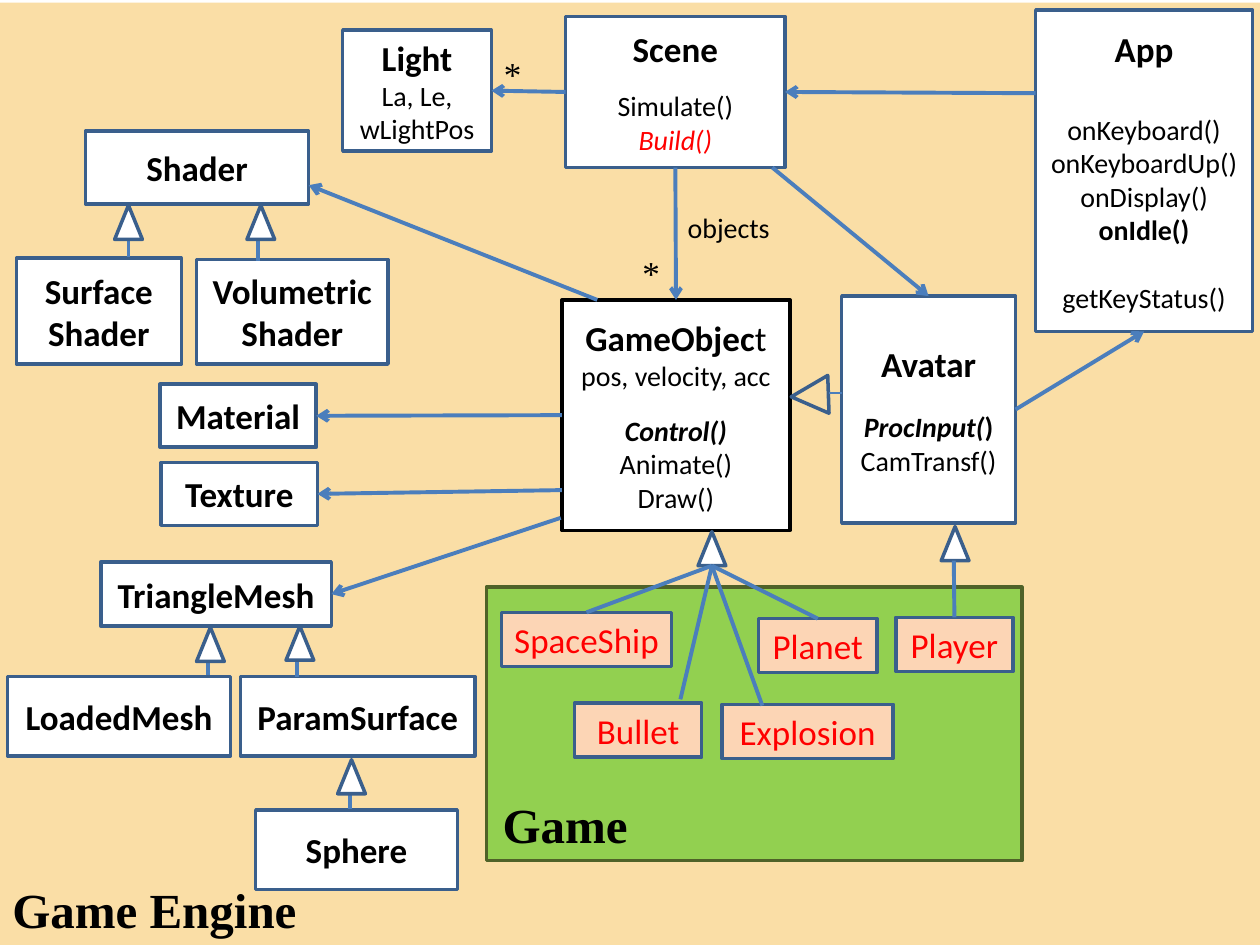
from dataclasses import dataclass

from lxml import etree
from pptx import Presentation
from pptx.dml.color import RGBColor
from pptx.enum.shapes import MSO_CONNECTOR, MSO_SHAPE
from pptx.enum.text import MSO_ANCHOR, MSO_AUTO_SIZE, PP_ALIGN
from pptx.oxml.ns import qn
from pptx.util import Inches, Pt

RECTANGLE = MSO_SHAPE.RECTANGLE
TRIANGLE = MSO_SHAPE.ISOSCELES_TRIANGLE
STRAIGHT = MSO_CONNECTOR.STRAIGHT
MIDDLE = MSO_ANCHOR.MIDDLE
CENTER = PP_ALIGN.CENTER
GROW = MSO_AUTO_SIZE.SHAPE_TO_FIT_TEXT

SAND = RGBColor(0xFA, 0xDE, 0xA6)
GREEN = RGBColor(0x92, 0xD0, 0x50)
DARK_GREEN = RGBColor(0x4F, 0x62, 0x28)
PEACH = RGBColor(0xFC, 0xD5, 0xB5)
WHITE = RGBColor(0xFF, 0xFF, 0xFF)
BLACK = RGBColor(0x00, 0x00, 0x00)
RED = RGBColor(0xFF, 0x00, 0x00)
OUTLINE = RGBColor(0x3A, 0x5F, 0x8C)
ARROW = RGBColor(0x4B, 0x7E, 0xBC)

TOP, LEFT, BOTTOM, RIGHT = range(4)


@dataclass
class Row:
    text: str
    size: int = 16
    bold: bool = False
    italic: bool = False
    color: RGBColor = BLACK
    gap: float = 0
    tail: str = ""
    tail_bold: bool = False


def title(text, **options):
    return Row(text, size=20, bold=True, **options)


class Diagram:
    font = "Calibri"
    serif = "Times New Roman"

    def __init__(self, slide):
        self.slide = slide
        self.shapes = slide.shapes

    def paint(self, shape, fill, outline):
        shape.shadow.inherit = False
        if fill is None:
            shape.fill.background()
        else:
            shape.fill.solid()
            shape.fill.fore_color.rgb = fill
        if outline is None:
            shape.line.fill.background()
        else:
            shape.line.color.rgb = outline
            shape.line.width = Pt(2)

    def style(self, span, font, size, bold, italic, color):
        span.font.name = font
        span.font.size = Pt(size)
        span.font.bold = bold
        span.font.italic = italic
        span.font.color.rgb = color

    def box(self, place, rows=(), fill=WHITE, outline=OUTLINE, kind=RECTANGLE):
        shape = self.shapes.add_shape(kind, *map(Inches, place))
        self.paint(shape, fill, outline)
        frame = shape.text_frame
        frame.word_wrap = True
        frame.vertical_anchor = MIDDLE
        for index, row in enumerate(rows):
            para = frame.add_paragraph() if index else frame.paragraphs[0]
            para.text = row.text
            para.alignment = CENTER
            para.space_before = Pt(row.gap)
            self.style(para.runs[0], self.font, row.size, row.bold, row.italic, row.color)
            if row.tail:
                span = para.add_run()
                span.text = row.tail
                self.style(span, self.font, row.size, row.tail_bold, False, row.color)
        return shape

    def label(self, place, text, size, font, bold=False):
        shape = self.shapes.add_textbox(*map(Inches, place))
        frame = shape.text_frame
        frame.text = text
        frame.word_wrap = False
        frame.auto_size = GROW
        self.style(frame.paragraphs[0].runs[0], font, size, bold, False, BLACK)

    def triangle(self, left, top):
        self.box((left, top, 0.22, 0.27), kind=TRIANGLE)

    def side_triangle(self, points):
        corners = [(Inches(x), Inches(y)) for x, y in points]
        builder = self.shapes.build_freeform(*corners[0])
        builder.add_line_segments(corners[1:], close=True)
        self.paint(builder.convert_to_shape(), None, OUTLINE)

    def line(self, start, end, start_box=None, end_box=None, arrow=False, width=2.25):
        connector = self.shapes.add_connector(STRAIGHT, *map(Inches, start + end))
        if start_box:
            connector.begin_connect(*start_box)
        if end_box:
            connector.end_connect(*end_box)
        connector.line.color.rgb = ARROW
        connector.line.width = Pt(width)
        if arrow:
            etree.SubElement(connector.line._get_or_add_ln(), qn("a:tailEnd"), type="arrow")
        etree.SubElement(connector._element.spPr, qn("a:effectLst"))


def main():
    deck = Presentation()
    deck.slide_width, deck.slide_height = Inches(10), Inches(7.5)
    diagram = Diagram(deck.slides.add_slide(deck.slide_layouts[6]))

    diagram.box((0, 0.02, 10.04, 7.48), fill=SAND, outline=None)
    diagram.box((3.86, 4.66, 4.25, 2.17), fill=GREEN, outline=DARK_GREEN)

    engine_places = {
        "Shader": (0.68, 1.04, 1.77, 0.58),
        "Surface Shader": (0.13, 2.05, 1.31, 0.84),
        "Volumetric Shader": (1.56, 2.06, 1.52, 0.83),
        "Material": (1.27, 3.05, 1.24, 0.5),
        "Texture": (1.28, 3.67, 1.24, 0.5),
        "TriangleMesh": (0.8, 4.46, 1.83, 0.51),
        "LoadedMesh": (0.06, 5.37, 1.77, 0.63),
        "ParamSurface": (1.91, 5.37, 1.86, 0.63),
        "Sphere": (2.03, 6.43, 1.6, 0.63),
    }
    game_places = {
        "SpaceShip": (3.98, 4.86, 1.35, 0.43),
        "Planet": (6.02, 4.91, 0.94, 0.43),
        "Bullet": (4.56, 5.58, 1.01, 0.43),
        "Explosion": (5.73, 5.59, 1.36, 0.43),
        "Player": (7.11, 4.9, 0.93, 0.43),
    }
    boxes = {name: diagram.box(place, [title(name)]) for name, place in engine_places.items()}
    for name, place in game_places.items():
        boxes[name] = diagram.box(place, [Row(name, size=20, color=RED)], fill=PEACH)

    light = diagram.box((2.72, 0.24, 1.18, 0.96),
                        [title("Light"), Row("La, Le,"), Row("wLightPos")])
    scene = diagram.box((4.49, 0.13, 1.74, 1.2), [
        title("Scene"), Row("Simulate()", gap=11), Row("Build()", italic=True, color=RED)])
    app = diagram.box((8.22, 0.08, 1.72, 2.55), [
        title("App"), Row("onKeyboard()", gap=24.4), Row("onKeyboardUp()"),
        Row("onDisplay()"), Row("onIdle()", bold=True), Row("getKeyStatus()", gap=19.5)])
    game_object = diagram.box((4.46, 2.38, 1.81, 1.83), [
        title("GameObjec", tail="t"), Row("pos, velocity, acc"),
        Row("Control()", bold=True, italic=True, gap=12.2),
        Row("Animate()"), Row("Draw()")], outline=BLACK)
    avatar = diagram.box((6.68, 2.35, 1.38, 1.8), [
        title("Avatar"),
        Row("ProcInput(", bold=True, italic=True, gap=14.6, tail=")", tail_bold=True),
        Row("CamTransf()")])

    for start, end, start_box, end_box in [
        ((4.49, 0.73), (3.9, 0.72), (scene, LEFT), (light, RIGHT)),
        ((8.22, 0.74), (6.23, 0.73), None, (scene, RIGHT)),
        ((5.36, 1.33), (5.37, 2.38), (scene, BOTTOM), (game_object, TOP)),
        ((6.13, 1.33), (7.37, 2.35), None, (avatar, TOP)),
        ((8.06, 3.25), (9.08, 2.63), (avatar, RIGHT), (app, BOTTOM)),
        ((4.74, 2.38), (2.45, 1.47), None, None),
        ((4.46, 3.3), (2.51, 3.3), (game_object, LEFT), (boxes["Material"], RIGHT)),
        ((4.46, 3.89), (2.52, 3.92), None, (boxes["Texture"], RIGHT)),
        ((4.45, 4.11), (2.63, 4.72), None, (boxes["TriangleMesh"], RIGHT)),
    ]:
        diagram.line(start, end, start_box, end_box, arrow=True)

    for start, end in [
        ((1.02, 2.04), (1.02, 1.87)),
        ((2.05, 2.07), (2.05, 1.86)),
        ((1.65, 5.36), (1.65, 5.25)),
        ((2.36, 5.37), (2.36, 5.22)),
        ((2.78, 6.3), (2.78, 6.42)),
    ]:
        diagram.line(start, end)
    for left, top in [(0.91, 1.63), (1.96, 1.63), (1.56, 4.98), (2.27, 4.97),
                      (2.68, 6.03), (5.54, 4.22), (7.47, 4.18)]:
        diagram.triangle(left, top)
    diagram.side_triangle([(6.28, 3.15), (6.57, 2.98), (6.58, 3.28)])
    diagram.line((6.58, 3.12), (6.68, 3.12), width=0.75)

    fan = (5.65, 4.49)
    diagram.line(fan, (4.66, 4.86), end_box=(boxes["SpaceShip"], TOP))
    diagram.line(fan, (6.49, 4.91), end_box=(boxes["Planet"], TOP))
    diagram.line(fan, (5.4, 5.55))
    diagram.line(fan, (6.05, 5.6))
    diagram.line((7.57, 4.45), (7.57, 4.9), end_box=(boxes["Player"], TOP))

    diagram.label((3.9, 0.37, 0.34, 0.44), "*", 20, diagram.serif)
    diagram.label((5, 1.95, 0.34, 0.44), "*", 20, diagram.serif)
    diagram.label((5.36, 1.62, 0.86, 0.37), "objects", 16, diagram.font)
    diagram.label((0, 6.93, 2.48, 0.57), "Game Engine", 28, diagram.serif, bold=True)
    diagram.label((3.89, 6.26, 1.2, 0.57), "Game", 28, diagram.serif, bold=True)

    deck.save("out.pptx")


if __name__ == "__main__":
    main()
